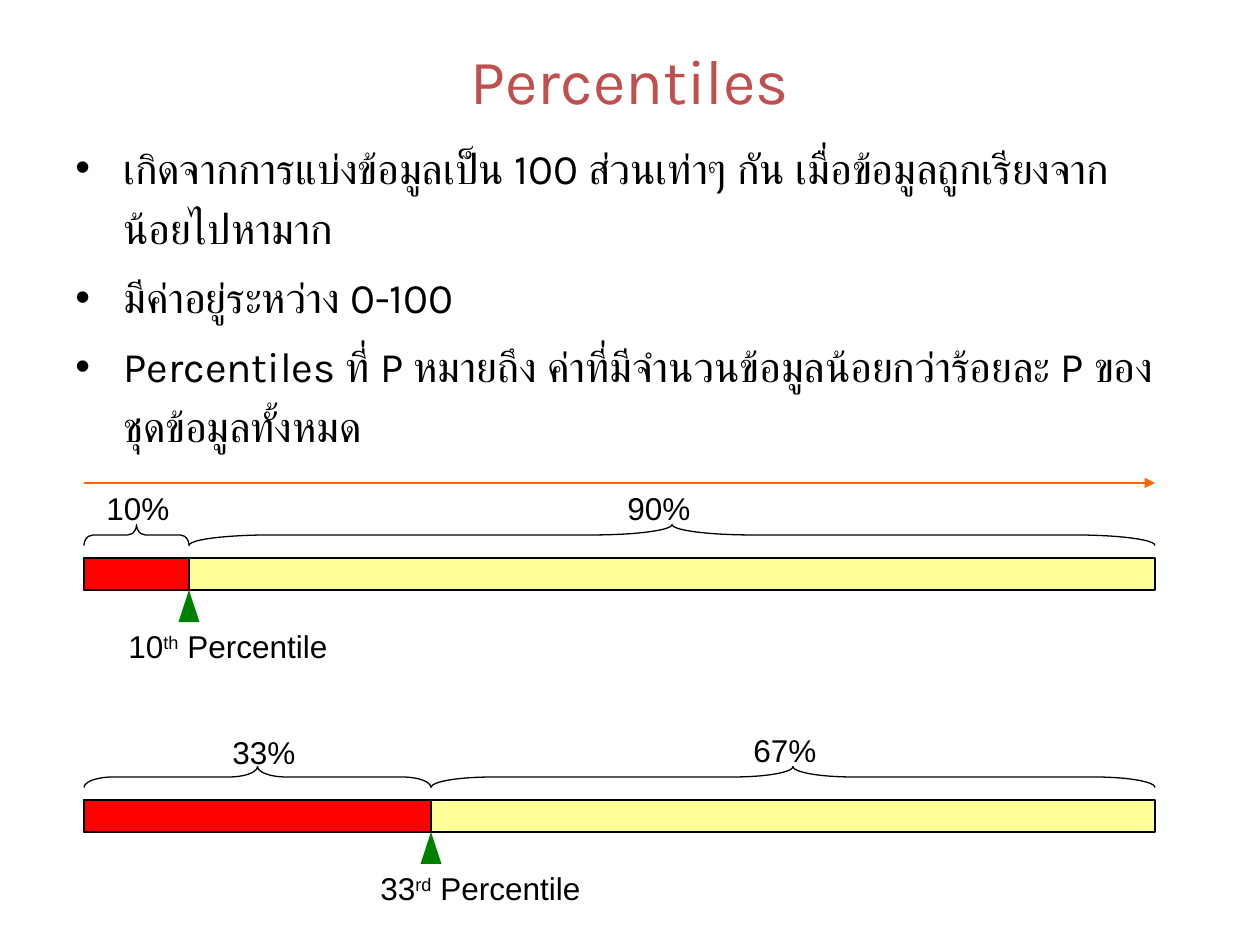
from lxml import etree
from pptx import Presentation
from pptx.dml.color import RGBColor
from pptx.enum.shapes import MSO_CONNECTOR as Connector, MSO_SHAPE as Shape
from pptx.enum.text import MSO_ANCHOR as Anchor, PP_ALIGN as Align
from pptx.oxml.ns import qn
from pptx.util import Emu, Pt

# Content
TITLE = "Percentiles"
BULLETS = [
    "เกิดจากการแบ่งข้อมูลเป็น 100 ส่วนเท่าๆ กัน เมื่อข้อมูลถูกเรียงจากน้อยไปหามาก",
    "มีค่าอยู่ระหว่าง 0-100",
    "Percentiles ที่ P หมายถึง ค่าที่มีจำนวนข้อมูลน้อยกว่าร้อยละ P ของชุดข้อมูลทั้งหมด",
]
# Lengths in px; shares are (text, left, top), caption is (number, suffix, left)
BARS = [
    {"top": 558, "below": 105, "caption": ("10", "th", 116),
     "shares": [("10%", 94, 483), ("90%", 615, 483)]},
    {"top": 800, "below": 347, "caption": ("33", "rd", 368),
     "shares": [("33%", 220, 727), ("67%", 741, 725)]},
]

# Style and measures
BLACK = RGBColor(0x00, 0x00, 0x00)
TITLE_RED = RGBColor(0xC0, 0x50, 0x4D)
RED = RGBColor(0xFF, 0x00, 0x00)
YELLOW = RGBColor(0xFF, 0xFF, 0x99)
GREEN = RGBColor(0x00, 0x80, 0x00)
ORANGE = RGBColor(0xFF, 0x66, 0x00)
BAR_LEFT, BAR_WIDTH, BAR_HEIGHT = 84, 1071, 32
BRACE_DEPTH, BRACE_RISE = 21, 23
MARKER_WIDTH = 21
ARROW_TOP = 483


def px(length):
    return Emu(round(length * 914400 / 126))


def add_text(left, top, width, height, wrap=True):
    frame = slide.shapes.add_textbox(px(left), px(top), px(width), px(height)).text_frame
    frame.word_wrap = wrap
    return frame


def set_font(para, name, size, color):
    para.font.name, para.font.size = name, Pt(size)
    para.font.color.rgb = color


def add_shape(kind, left, top, width, height, fill=None, outlined=True):
    shape = slide.shapes.add_shape(kind, px(left), px(top), px(width), px(height))
    shape.shadow.inherit = False
    if fill is None:
        shape.fill.background()
    else:
        shape.fill.solid()
        shape.fill.fore_color.rgb = fill
    if outlined:
        shape.line.color.rgb = BLACK
        shape.line.width = Pt(0.75)
    else:
        shape.line.fill.background()
    return shape


def add_brace(left, length, middle):
    # An upright brace turned a quarter about its centre
    brace = add_shape(Shape.LEFT_BRACE, left + (length - BRACE_DEPTH) / 2,
                      middle - length / 2, BRACE_DEPTH, length)
    brace.rotation = 90
    brace.adjustments[0] = length / BRACE_DEPTH / 12


def add_bullet(para):
    props = para._p.get_or_add_pPr()
    props.set("marL", str(px(48)))
    props.set("indent", str(-px(48)))
    etree.SubElement(props, qn("a:buFont")).set("typeface", "Arial")
    etree.SubElement(props, qn("a:buChar")).set("char", "•")


deck = Presentation()
deck.slide_width, deck.slide_height = px(1260), px(945)
slide = deck.slides.add_slide(deck.slide_layouts[6])

# Title
frame = add_text(63, 21, 1134, 116)
frame.vertical_anchor = Anchor.MIDDLE
para = frame.paragraphs[0]
para.text, para.alignment = TITLE, Align.CENTER
set_font(para, "Karla", 36, TITLE_RED)

# Bullets
frame = add_text(63, 126, 1124, 336)
for index, text in enumerate(BULLETS):
    para = frame.paragraphs[0] if index == 0 else frame.add_paragraph()
    para.text = text
    para.line_spacing, para.space_before = 1.2, Pt(4.8)
    add_bullet(para)
    set_font(para, "Karla", 24, BLACK)

# Bars with braces, marker and labels
for bar in BARS:
    top, below = bar["top"], bar["below"]
    split = BAR_LEFT + below
    add_shape(Shape.RECTANGLE, BAR_LEFT, top, BAR_WIDTH, BAR_HEIGHT, YELLOW)
    add_shape(Shape.RECTANGLE, BAR_LEFT, top, below, BAR_HEIGHT, RED)
    add_shape(Shape.ISOSCELES_TRIANGLE, split - MARKER_WIDTH / 2, top + BAR_HEIGHT,
              MARKER_WIDTH, BAR_HEIGHT, GREEN, outlined=False)
    add_brace(BAR_LEFT, below, top - BRACE_RISE)
    add_brace(split, BAR_WIDTH - below, top - BRACE_RISE)

    for text, left, label_top in bar["shares"]:
        para = add_text(left, label_top, 88, 50, wrap=False).paragraphs[0]
        para.text = text
        set_font(para, "Arial", 18, BLACK)

    number, suffix, left = bar["caption"]
    para = add_text(left, top + 63, 231, 50).paragraphs[0]
    set_font(para, "Arial", 18, BLACK)
    for text in (number, suffix, " Percentile"):
        span = para.add_run()
        span.text = text
        if text == suffix:
            span._r.get_or_add_rPr().set("baseline", "30000")

# Arrow over the bars
arrow = slide.shapes.add_connector(Connector.STRAIGHT, px(BAR_LEFT), px(ARROW_TOP),
                                   px(BAR_LEFT + BAR_WIDTH), px(ARROW_TOP))
arrow.line.color.rgb = ORANGE
arrow.line.width = Pt(1.5)
etree.SubElement(arrow.line._get_or_add_ln(), qn("a:tailEnd")).set("type", "triangle")
etree.SubElement(arrow._element.spPr, qn("a:effectLst"))

deck.save("out.pptx")
